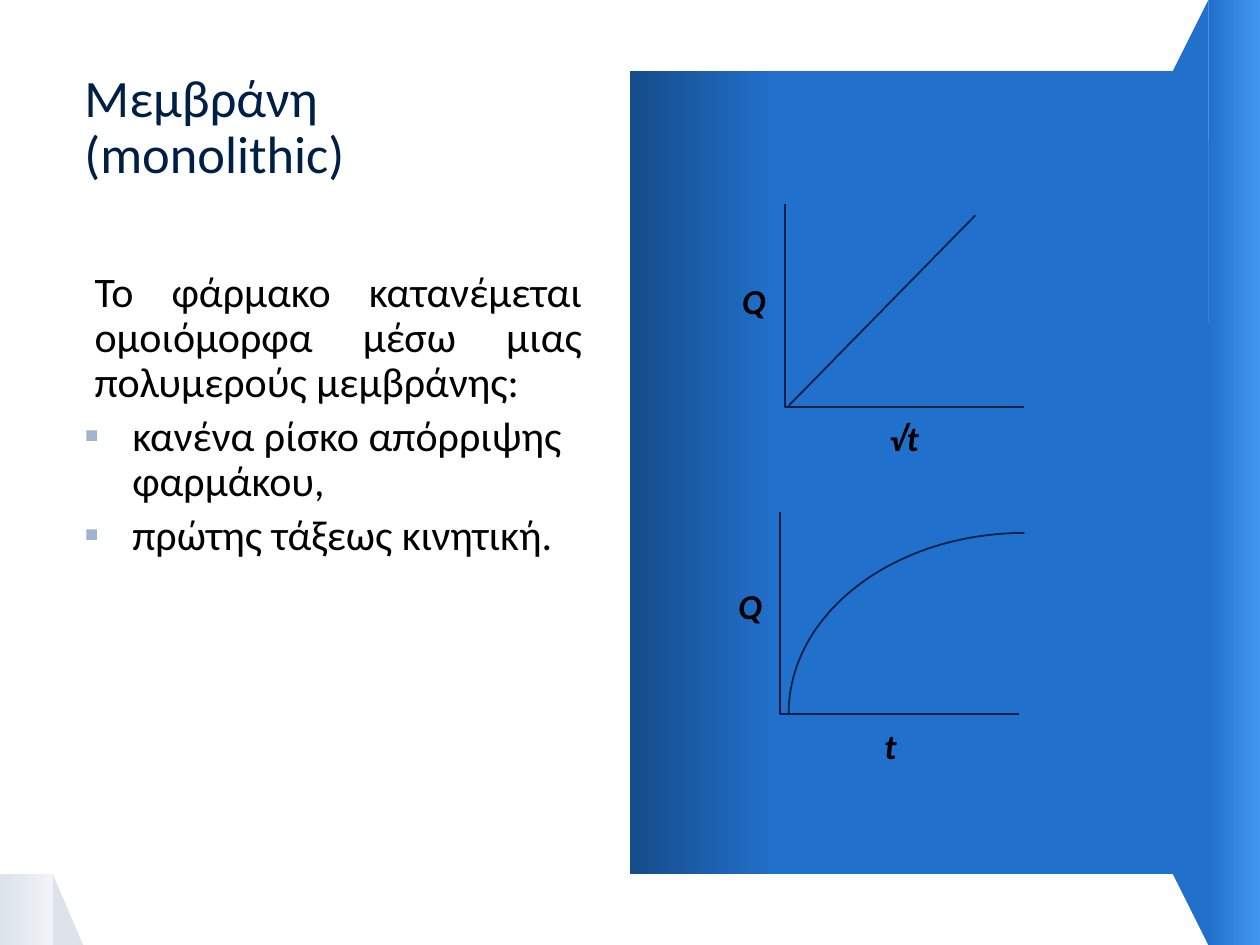
import math
from lxml import etree
from pptx import Presentation
from pptx.dml import color
from pptx.enum import shapes, text
from pptx.oxml import ns
from pptx.util import Inches, Pt

COLORS = {"navy": "001F46", "black": "000000", "blue": "2170CC", "deep": "154C8A",
          "sky": "4397EE", "mist": "DDE3EB", "pale": "F0F3F7", "bullet": "A1B3CD"}
TITLE = "Μεμβράνη (monolithic)"
BODY = [("Το φάρμακο κατανέμεται ομοιόμορφα μέσω μιας πολυμερούς μεμβράνης: ", False),
        ("κανένα ρίσκο απόρριψης φαρμάκου,", True),
        ("πρώτης τάξεως κινητική.", True)]
KIND = shapes.MSO_SHAPE
PANELS = [(KIND.RIGHT_TRIANGLE, (0.42, 6.94, 0.24, 0.56), [(0, "mist")]),
          (KIND.RECTANGLE, (0, 6.94, 0.42, 0.56), [(0, "mist"), (1, "pale")]),
          (KIND.RECTANGLE, (9.59, 0, 0.41, 7.5), [(0, "blue"), (1, "sky")]),
          (KIND.RECTANGLE, (5, 0.56, 4.31, 6.38), [(0, "deep"), (0.27, "blue")])]
FLAP = [(9.59, 0), (9.31, 0.56), (9.31, 6.94), (9.6, 7.52)]
AXES = [(6.23, 1.62), (6.19, 4.06)]
AXIS_W, AXIS_H = 1.9, 1.61
LABELS = [("Q", (5.79, 2.17, 0.4)), ("√t", (6.96, 3.26, 0.44)),
          ("Q", (5.76, 4.59, 0.4)), ("t", (6.92, 5.7, 0.3))]
LABEL_H = 0.43
LINE = [(6.26, 3.22), (7.74, 1.71)]
CURVE_END, CURVE_W, CURVE_H, STEPS = (8.13, 5.66), 1.87, 1.43, 48

LABEL_FONT = {"name": "Calibri", "size": Pt(20), "bold": True, "italic": True}
TITLE_FONT = {"name": "Calibri", "size": Pt(30), "bold": False}
BODY_FONT = {"name": "Calibri", "size": Pt(24)}


def rgb(name):
    return color.RGBColor.from_string(COLORS[name])


def inches(values):
    return [Inches(v) for v in values]


def set_attrs(obj, values):
    for name, value in values.items():
        setattr(obj, name, value)


def write(p, words, font, ink):
    r = p.add_run()
    r.text = words
    set_attrs(r.font, font)
    r.font.color.rgb = rgb(ink)


def paint(sp, stops):
    sp.shadow.inherit = False
    sp.line.fill.background()
    if len(stops) == 1:
        sp.fill.solid()
        sp.fill.fore_color.rgb = rgb(stops[0][1])
        return
    sp.fill.gradient()
    sp.fill.gradient_angle = 0
    for stop, (position, name) in zip(sp.fill.gradient_stops, stops):
        stop.position = position
        stop.color.rgb = rgb(name)


def outline(s, points, close):
    builder = s.shapes.build_freeform(*inches(points[0]), scale=1.0)
    builder.add_line_segments([inches(pt) for pt in points[1:]], close=close)
    return builder.convert_to_shape()


def stroke(sp):
    sp.line.color.rgb = rgb("navy")
    sp.line.width = Pt(1)


def open_path(s, points):
    sp = outline(s, points, False)
    sp.shadow.inherit = False
    sp.fill.background()
    stroke(sp)


def place(sp, box):
    set_attrs(sp, dict(zip(("left", "top", "width", "height"), inches(box))))
    set_attrs(sp.text_frame, {"margin_left": 0, "margin_top": 0, "margin_right": 0,
                              "margin_bottom": 0, "word_wrap": True,
                              "auto_size": text.MSO_AUTO_SIZE.NONE,
                              "vertical_anchor": text.MSO_ANCHOR.TOP})
    return sp.text_frame


def set_bullet(p, bulleted):
    pPr = p._p.get_or_add_pPr()
    left, hang = (0.38, -0.38) if bulleted else (0.08, 0)
    pPr.set("marL", str(Inches(left)))
    pPr.set("indent", str(Inches(hang)))
    if not bulleted:
        etree.SubElement(pPr, ns.qn("a:buNone"))
        return
    clr = etree.SubElement(pPr, ns.qn("a:buClr"))
    etree.SubElement(clr, ns.qn("a:srgbClr"), val=COLORS["bullet"])
    etree.SubElement(pPr, ns.qn("a:buFont"), typeface="Calibri")
    etree.SubElement(pPr, ns.qn("a:buChar"), char="▪")


def add_text(s):
    p = place(s.shapes.title, (0.67, 0.57, 3.95, 1.34)).paragraphs[0]
    set_attrs(p, {"alignment": text.PP_ALIGN.LEFT, "line_spacing": 0.9})
    write(p, TITLE, TITLE_FONT, "navy")
    tf = place(s.placeholders[1], (0.67, 2.15, 3.95, 4.12))
    for i, (words, bulleted) in enumerate(BODY):
        p = tf.add_paragraph() if i else tf.paragraphs[0]
        align = text.PP_ALIGN.LEFT if bulleted else text.PP_ALIGN.JUSTIFY
        set_attrs(p, {"alignment": align, "line_spacing": 0.9, "space_before": Pt(4.8)})
        set_bullet(p, bulleted)
        write(p, words, BODY_FONT, "black")


def add_graphs(s):
    for x, y in AXES:
        open_path(s, [(x, y), (x, y + AXIS_H), (x + AXIS_W, y + AXIS_H)])
    start, end = LINE
    line = s.shapes.add_connector(shapes.MSO_CONNECTOR.STRAIGHT, *inches(start + end))
    stroke(line)
    etree.SubElement(line._element.spPr, ns.qn("a:effectLst"))
    cx, cy = CURVE_END
    angles = [math.pi / 2 * i / STEPS for i in range(STEPS + 1)]
    open_path(s, [(cx - CURVE_W * math.cos(a), cy - CURVE_H * math.sin(a)) for a in angles])
    for words, box in LABELS:
        tf = s.shapes.add_textbox(*inches(box + (LABEL_H,))).text_frame
        set_attrs(tf, {"word_wrap": False, "auto_size": text.MSO_AUTO_SIZE.SHAPE_TO_FIT_TEXT})
        write(tf.paragraphs[0], words, LABEL_FONT, "black")


def main():
    prs = Presentation()
    prs.slide_width, prs.slide_height = Inches(10), Inches(7.5)
    s = prs.slides.add_slide(prs.slide_layouts[1])
    for kind, box, stops in PANELS:
        paint(s.shapes.add_shape(kind, *inches(box)), stops)
    paint(outline(s, FLAP, True), [(0, "blue")])
    add_text(s)
    add_graphs(s)
    prs.save("out.pptx")


if __name__ == "__main__":
    main()
